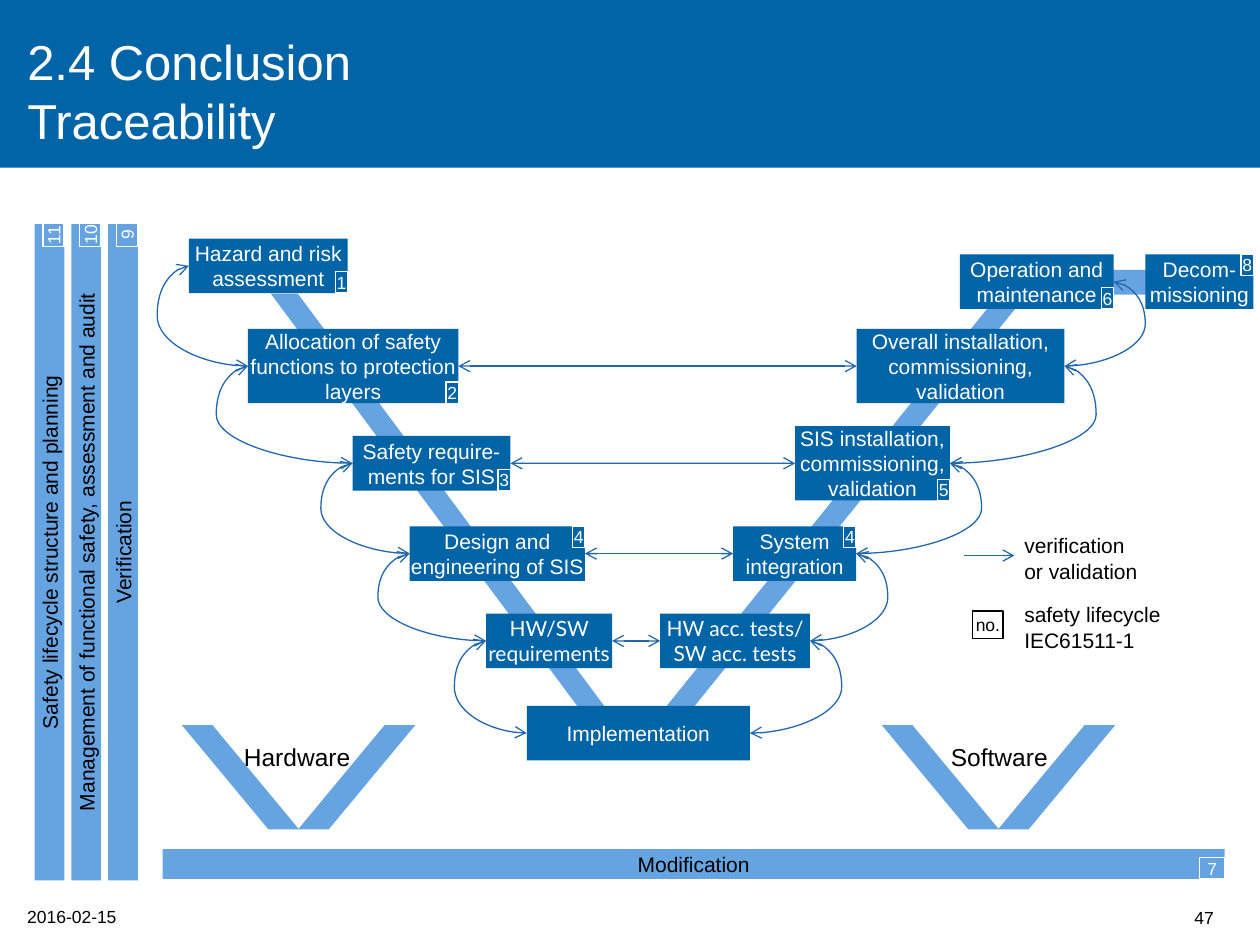
import pptx
import pptx.util
import pptx.dml.color
import pptx.enum.shapes
import pptx.enum.text
import pptx.oxml
import pptx.oxml.ns
from dataclasses import dataclass

Cm = pptx.util.Cm
Shape = pptx.enum.shapes.MSO_SHAPE
Link = pptx.enum.shapes.MSO_CONNECTOR
Align = pptx.enum.text.PP_ALIGN
Anchor = pptx.enum.text.MSO_ANCHOR
qn = pptx.oxml.ns.qn


@dataclass(frozen=True)
class Theme:
    dark: str = "0064A6"
    light: str = "66A3E1"
    arrow: str = "2266AB"
    white: str = "FFFFFF"
    black: str = "000000"
    font: str = "Arial"
    test_font: str = "Lato"
    title: int = 28
    branch: int = 14
    body: int = 12
    small: int = 10
    hairline: float = 0.75


theme = Theme()
rgb = pptx.dml.color.RGBColor.from_string


def block(geometry, left, top, width, height, fill=None, line=None):
    shape = slide.shapes.add_shape(geometry, Cm(left), Cm(top), Cm(width), Cm(height))
    shape.shadow.inherit = False
    if fill:
        shape.fill.solid()
        shape.fill.fore_color.rgb = rgb(fill)
    else:
        shape.fill.background()
    if line:
        shape.line.color.rgb = rgb(line)
        shape.line.width = pptx.util.Pt(theme.hairline)
    else:
        shape.line.fill.background()
    return shape


def write(shape, text, size, color, align=Align.CENTER, anchor=Anchor.MIDDLE, inset=0, font=theme.font):
    frame = shape.text_frame
    frame.word_wrap = True
    frame.vertical_anchor = anchor
    frame.margin_left = frame.margin_right = Cm(inset)
    frame.margin_top = frame.margin_bottom = Cm(inset / 2)
    frame.text = text
    for paragraph in frame.paragraphs:
        paragraph.alignment = align
        for run in paragraph.runs:
            run.font.size = pptx.util.Pt(size)
            run.font.name = font
            run.font.color.rgb = rgb(color)


deck = pptx.Presentation()
deck.slide_width, deck.slide_height = Cm(25.4), Cm(19.05)
slide = deck.slides.add_slide(deck.slide_layouts[5])

header = block(Shape.RECTANGLE, 0, 0, 25.4, 3.38, theme.dark)
slide.shapes.element.insert(2, header.element)
title = slide.shapes.title
title.left, title.top, title.width, title.height = Cm(0.3), Cm(0.53), Cm(19.2), Cm(2.6)
write(title, "2.4 Conclusion\vTraceability", theme.title, theme.white, Align.LEFT, inset=0.25)

for left, top, width, height, slant, flipped in [
    (13.41, 6.22, 7.06, 8.05, 0.92, False),
    (5.46, 5.92, 6.81, 8.43, 0.92, True),
    (20.12, 14.62, 2.36, 2.1, 0.83, False),
    (17.78, 14.62, 2.36, 2.1, 0.83, True),
    (6.01, 14.62, 2.36, 2.1, 0.83, False),
    (3.67, 14.62, 2.36, 2.1, 0.83, True),
]:
    leg = block(Shape.PARALLELOGRAM, left, top, width, height, theme.light)
    leg.adjustments[0] = slant
    if flipped:
        leg.element.spPr.xfrm.set("flipH", "1")
block(Shape.RECTANGLE, 22.07, 5.44, 1.2, 0.5, theme.light)

low, tall = 1.1, 1.5
badge_width, badge_height = 0.25, 0.43
badges = []
phases = {}
for key, left, middle, width, height, text, number, corner in [
    ("hazard", 3.81, 5.36, 3.2, low, "Hazard and risk assessment", "1", "bottom"),
    ("allocation", 5, 7.38, 4.24, tall, "Allocation of safety functions to protection layers", "2", "bottom"),
    ("safety", 7.11, 9.34, 3.18, low, "Safety require-ments for SIS", "3", "bottom"),
    ("design", 8.26, 11.16, 3.53, low, "Design and engineering of SIS", "4", "top"),
    ("hw_sw", 9.8, 12.92, 2.54, low, "HW/SW requirements", None, None),
    ("implementation", 10.62, 14.78, 4.5, low, "Implementation", None, None),
    ("tests", 13.31, 12.92, 3.02, low, "HW acc. tests/ SW acc. tests", None, None),
    ("integration", 14.78, 11.16, 2.48, low, "System integration", "4", "top"),
    ("sis", 16.03, 9.34, 3.12, tall, "SIS installation, commissioning, validation", "5", "bottom"),
    ("overall", 17.27, 7.38, 4.19, tall, "Overall installation, commissioning, validation", None, None),
    ("operation", 19.35, 5.68, 3.1, low, "Operation and maintenance", "6", "bottom"),
    ("decommissioning", 23.09, 5.68, 2.18, low, "Decom-missioning", "8", "top"),
]:
    top = middle - height / 2
    phases[key] = block(Shape.RECTANGLE, left, top, width, height, theme.dark)
    font = theme.test_font if key in ("hw_sw", "tests") else theme.font
    write(phases[key], text, theme.body, theme.white, font=font)
    if number:
        badge_top = top if corner == "top" else top + height - badge_height
        badges.append((number, left + width - badge_width, badge_top, badge_width, 0))

descent = ["hazard", "allocation", "safety", "design", "hw_sw", "implementation"]
ascent = ["operation", "overall", "sis", "integration", "tests", "implementation"]
links = [(Link.CURVE, lower, 1, upper, 1) for upper, lower in zip(descent, descent[1:])]
links += [(Link.CURVE, upper, 3, lower, 3) for upper, lower in zip(ascent, ascent[1:])]
links += [(Link.STRAIGHT, right, 1, left, 3) for right, left in zip(ascent[1:5], descent[1:5])]

legend_arrow = slide.shapes.add_connector(Link.STRAIGHT, Cm(19.43), Cm(11.2), Cm(20.45), Cm(11.2))
arrows = [(legend_arrow, ["tailEnd"])]
bulge = Cm(0.64)
for kind, start, start_side, finish, finish_side in links:
    link = slide.shapes.add_connector(kind, 0, 0, 0, 0)
    link.begin_connect(phases[start], start_side)
    link.end_connect(phases[finish], finish_side)
    if kind == Link.CURVE:
        reach = bulge / link.width
        bend = 1 + reach if start_side == 1 else -reach
        guide = pptx.oxml.parse_xml(
            f'<a:gd {pptx.oxml.ns.nsdecls("a")} name="adj1" fmla="val {round(bend * 100000)}"/>')
        link.element.find(".//" + qn("a:avLst")).append(guide)
    arrows.append((link, ["headEnd", "tailEnd"]))

for arrow, ends in arrows:
    arrow.line.color.rgb = rgb(theme.arrow)
    arrow.line.width = pptx.util.Pt(theme.hairline)
    properties = arrow.element.spPr
    for end in ends:
        properties.find(qn("a:ln")).append(
            pptx.oxml.parse_xml(f'<a:{end} {pptx.oxml.ns.nsdecls("a")} type="arrow"/>'))
    properties.append(pptx.oxml.parse_xml(f'<a:effectLst {pptx.oxml.ns.nsdecls("a")}/>'))

bar_length, bar_thickness = 13.23, 0.6
side_badge_width = 0.48
for column, (number, text) in enumerate([
    ("11", "Safety lifecycle structure and planning"),
    ("10", "Management of functional safety, assessment and audit"),
    ("9", "Verification"),
]):
    center = 1 + 0.74 * column
    bar = block(Shape.RECTANGLE, center - bar_length / 2, 11.13 - bar_thickness / 2,
                bar_length, bar_thickness, theme.light)
    bar.rotation = 270
    write(bar, text, theme.body, theme.black)
    badges.append((number, center + 0.08 - side_badge_width / 2, 4.52, side_badge_width, 270))

modification = block(Shape.RECTANGLE, 3.28, 17.12, 21.41, bar_thickness, theme.light)
write(modification, "Modification", theme.body, theme.black)
badges.append(("7", 24.18, 17.29, 0.51, 0))

for number, left, top, width, rotation in badges:
    badge = block(Shape.RECTANGLE, left, top, width, badge_height, line=theme.white)
    badge.rotation = rotation
    write(badge, number, theme.small, theme.white, anchor=Anchor.TOP)

legend_number = block(Shape.RECTANGLE, 19.61, 12.32, 0.61, 0.56, line=theme.black)
write(legend_number, "no.", theme.small, theme.black)

for text, left, top, width, height, size, align, anchor in [
    ("Software", 18.92, 14.83, 3.4, 0.86, theme.branch, Align.LEFT, Anchor.TOP),
    ("Hardware", 4.29, 14.83, 3.4, 0.86, theme.branch, Align.CENTER, Anchor.TOP),
    ("verification or validation", 20.4, 10.62, 3, 1.27, theme.body, Align.LEFT, Anchor.TOP),
    ("safety lifecycle\vIEC61511-1", 20.4, 12.01, 4.57, 1.27, theme.body, Align.LEFT, Anchor.TOP),
    ("2016-02-15", 0.3, 18.14, 4.19, 0.69, theme.small, Align.LEFT, Anchor.TOP),
    ("47", 22.89, 17.98, 1.83, 1.02, theme.small, Align.RIGHT, Anchor.MIDDLE),
]:
    label = slide.shapes.add_textbox(Cm(left), Cm(top), Cm(width), Cm(height))
    write(label, text, size, theme.black, align, anchor, inset=0.25)

deck.save("out.pptx")
